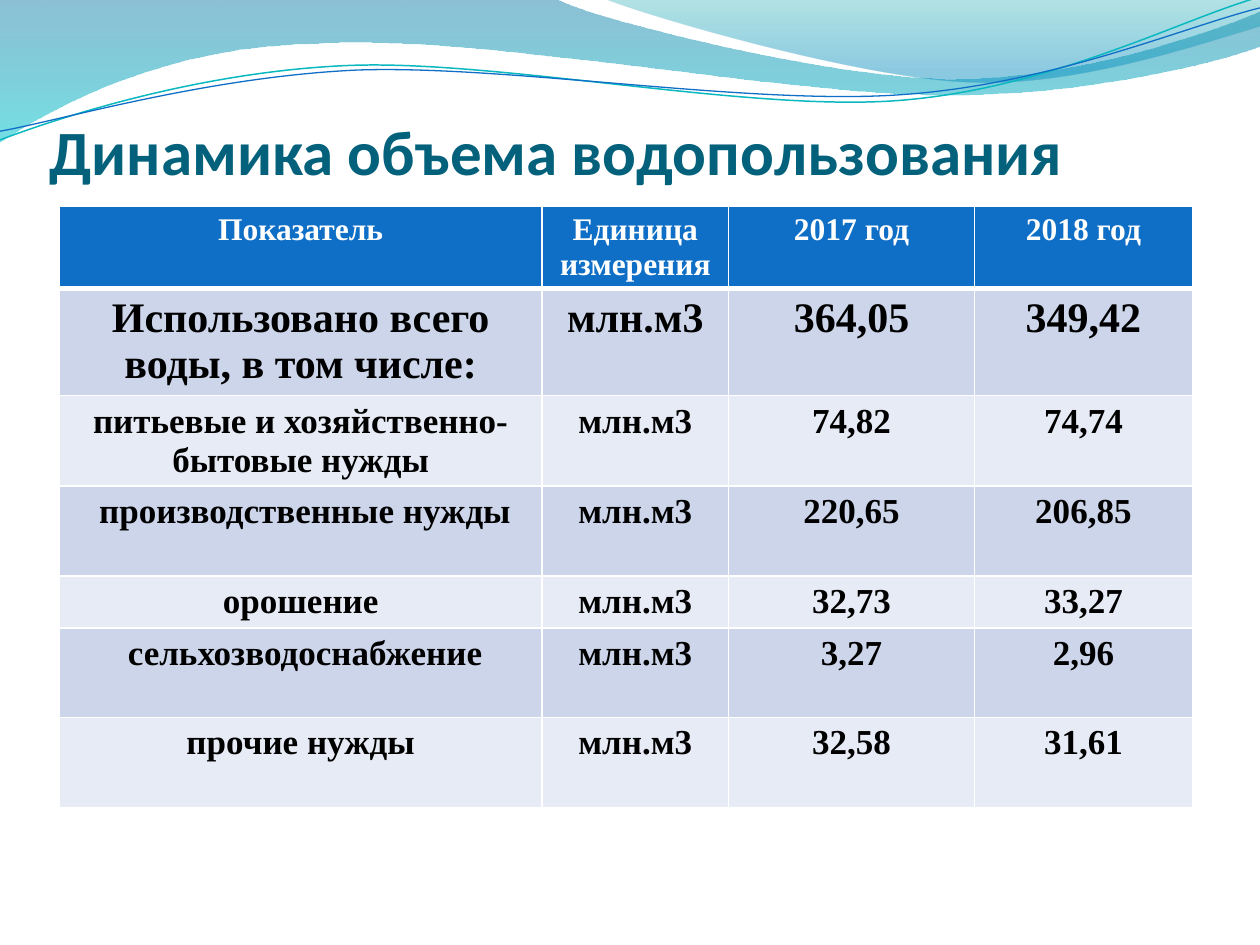
from lxml import etree
from pptx import Presentation
from pptx.dml.color import RGBColor
from pptx.enum import text
from pptx.oxml.ns import qn
from pptx.util import Pt

# Each outline is a start and segments: three points make a curve, one a line.
WAVES = [
    ((0, -0.5),
     [[(317, -1)],
      [(343, 12), (478, 45), (546, 45)],
      [(614, 45), (690, 19), (720, 6.5)],
      [(721, 26)],
      [(708, 32), (626, 55), (537, 54)],
      [(448, 54), (275, 20), (185, 24.5)],
      [(93, 26), (33, 60), (-1, 81.5)]],
     [(0, "0074A1", 45), (1, "00C6CF", 55)]),
    ((345, -1),
     [[(366, 8), (491, 45), (554, 47)],
      [(616, 50), (692, 23), (720, 15)],
      [(720, 0)]],
     [(0, "00A1A9", 30), (0.8, "008BBF", 45)]),
]
THREADS = [
    ((-1.4, 63),
     [[(33.7, 51.6), (114.3, 29.4), (199.4, 29.9)],
      [(284.4, 30.4), (425.8, 67.1), (512, 64.7)],
      [(599.3, 62.3), (676.1, 25.9), (720.6, 15.5)]],
     "0AB8BF", 0.85),
    ((-1.1, 58),
     [[(33.2, 53.6), (118.2, 32.6), (204.3, 32.7)],
      [(290.3, 33.7), (429.1, 63.8), (515.3, 61.4)],
      [(601.5, 59.4), (678.4, 30), (721.4, 21.5)]],
     "0F6FC6", 0.75),
]
THREAD_ROTATION = 357.3
COLUMNS = [275.7, 106.7, 140.5, 124.5]
UNIT = "млн.м3"
ROWS = [  # height, font size, cells
    (46.5, 18, ["Показатель", "Единица измерения", "2017 год", "2018 год"]),
    (60, 24, ["Использовано всего воды, в том числе:", UNIT, "364,05", "349,42"]),
    (51.8, 20, ["питьевые и хозяйственно-бытовые нужды", UNIT, "74,82", "74,74"]),
    (51.4, 20, [" производственные нужды", UNIT, "220,65", "206,85"]),
    (29.7, 20, ["орошение", UNIT, "32,73", "33,27"]),
    (51, 20, [" сельхозводоснабжение", UNIT, "3,27", "2,96"]),
    (51.8, 20, ["прочие нужды", UNIT, "32,58", "31,61"]),
]


def rgb(color):
    return RGBColor.from_string(color)


def set_font(p, name, size, color):
    p.font.name, p.font.size, p.font.bold = name, Pt(size), True
    p.font.color.rgb = rgb(color)


def add_outline(slide, start, segments, close):
    """Build a freeform, then join each triple of points into a curve."""
    points = [start] + [point for seg in segments for point in seg]
    points = [(Pt(x), Pt(y)) for x, y in points]
    builder = slide.shapes.build_freeform(*points[0])
    builder.add_line_segments(points[1:], close=close)
    sp = builder.convert_to_shape()
    sp.shadow.inherit = False
    lines = iter(list(sp._element.spPr.iter(qn("a:lnTo"))))
    for seg in segments:
        first, *others = [next(lines) for _ in seg]
        if others:
            curve = etree.Element(qn("a:cubicBezTo"))
            first.addprevious(curve)
            for line in (first, *others):
                curve.append(line[0])
                line.getparent().remove(line)
    return sp


def add_wave(slide, start, segments, stops):
    sp = add_outline(slide, start, segments, True)
    sp.fill.gradient()
    sp.fill.gradient_angle = 270
    for stop, (position, color, _) in zip(sp.fill.gradient_stops, stops):
        stop.position = position
        stop.color.rgb = rgb(color)
    for clr, (_, _, opacity) in zip(sp._element.spPr.iter(qn("a:srgbClr")), stops):
        etree.SubElement(clr, qn("a:alpha"), val=str(opacity * 1000))
    sp.line.fill.background()


def add_thread(slide, start, segments, color, width):
    sp = add_outline(slide, start, segments, False)
    sp.rotation = THREAD_ROTATION
    sp.fill.background()
    sp.line.color.rgb = rgb(color)
    sp.line.width = Pt(width)


def add_title(slide, title):
    tf = slide.shapes.add_textbox(Pt(28.3), Pt(50.5), Pt(648), Pt(57)).text_frame
    tf.word_wrap = True
    tf.vertical_anchor = text.MSO_ANCHOR.BOTTOM
    tf.margin_left = tf.margin_right = tf.margin_bottom = 0
    p = tf.paragraphs[0]
    p.text = title
    set_font(p, "Calibri", 36, "04617B")


def set_borders(cell, **widths):
    tc_pr = cell._tc.get_or_add_tcPr()
    for side in "LRTB":
        ln = etree.SubElement(tc_pr, qn("a:ln" + side), w=str(Pt(widths.get(side, 1))))
        fill = etree.SubElement(ln, qn("a:solidFill"))
        etree.SubElement(fill, qn("a:srgbClr"), val="FFFFFF")


def add_water_table(slide):
    table = slide.shapes.add_table(
        len(ROWS), len(COLUMNS), Pt(34), Pt(118), Pt(sum(COLUMNS)),
        Pt(sum(row[0] for row in ROWS))).table
    table.horz_banding = False
    for column, width in zip(table.columns, COLUMNS):
        column.width = Pt(width)
    for r, (height, size, values) in enumerate(ROWS):
        table.rows[r].height = Pt(height)
        band = "0F6FC6" if r == 0 else ("E7EBF5", "CCD5EA")[r % 2]
        for c, value in enumerate(values):
            cell = table.cell(r, c)
            cell.margin_bottom = 0
            set_borders(cell, B=1 if r else 3)
            cell.fill.solid()
            cell.fill.fore_color.rgb = rgb(band)
            p = cell.text_frame.paragraphs[0]
            p.text = value
            p.alignment = text.PP_ALIGN.CENTER
            set_font(p, "Times New Roman", size, "000000" if r else "FFFFFF")


def main():
    prs = Presentation()
    prs.slide_width, prs.slide_height = Pt(720), Pt(540)
    slide = prs.slides.add_slide(prs.slide_layouts[6])
    for wave in WAVES:
        add_wave(slide, *wave)
    for thread in THREADS:
        add_thread(slide, *thread)
    add_title(slide, "Динамика объема водопользования")
    add_water_table(slide)
    prs.save("out.pptx")


if __name__ == "__main__":
    main()
